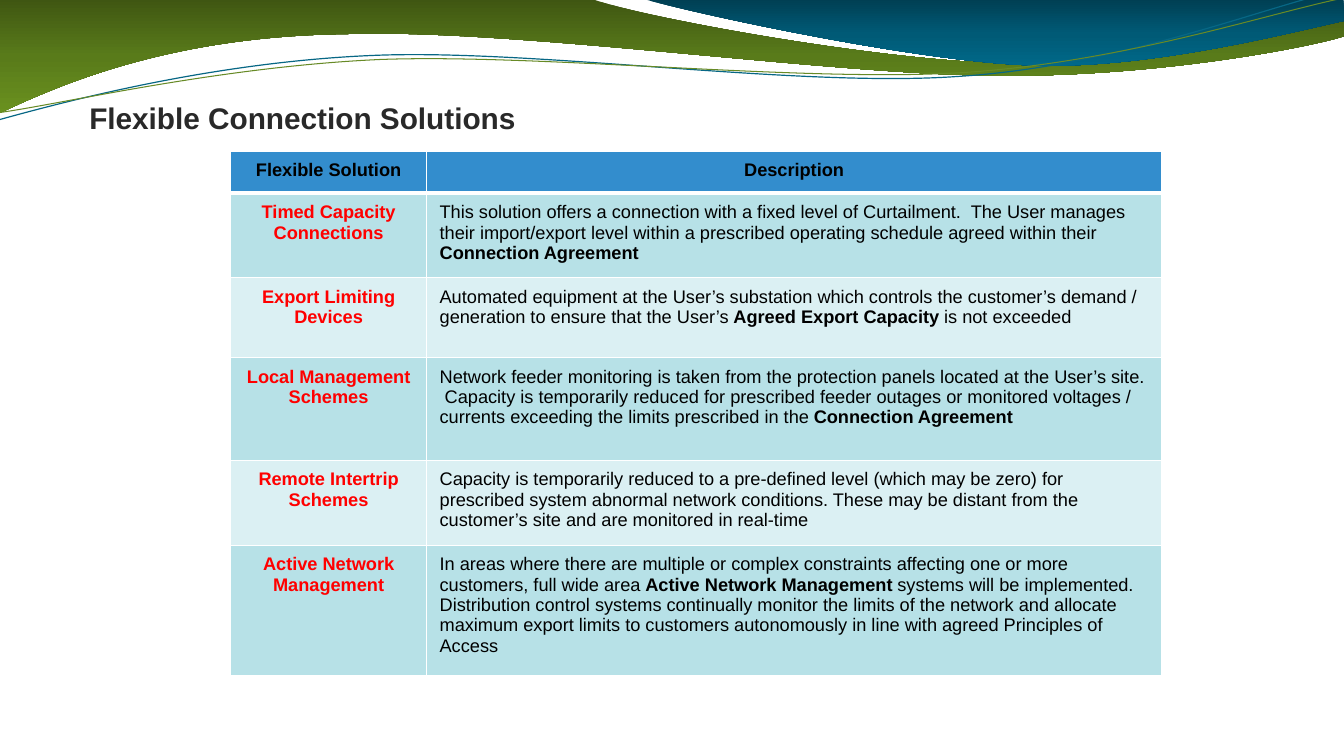
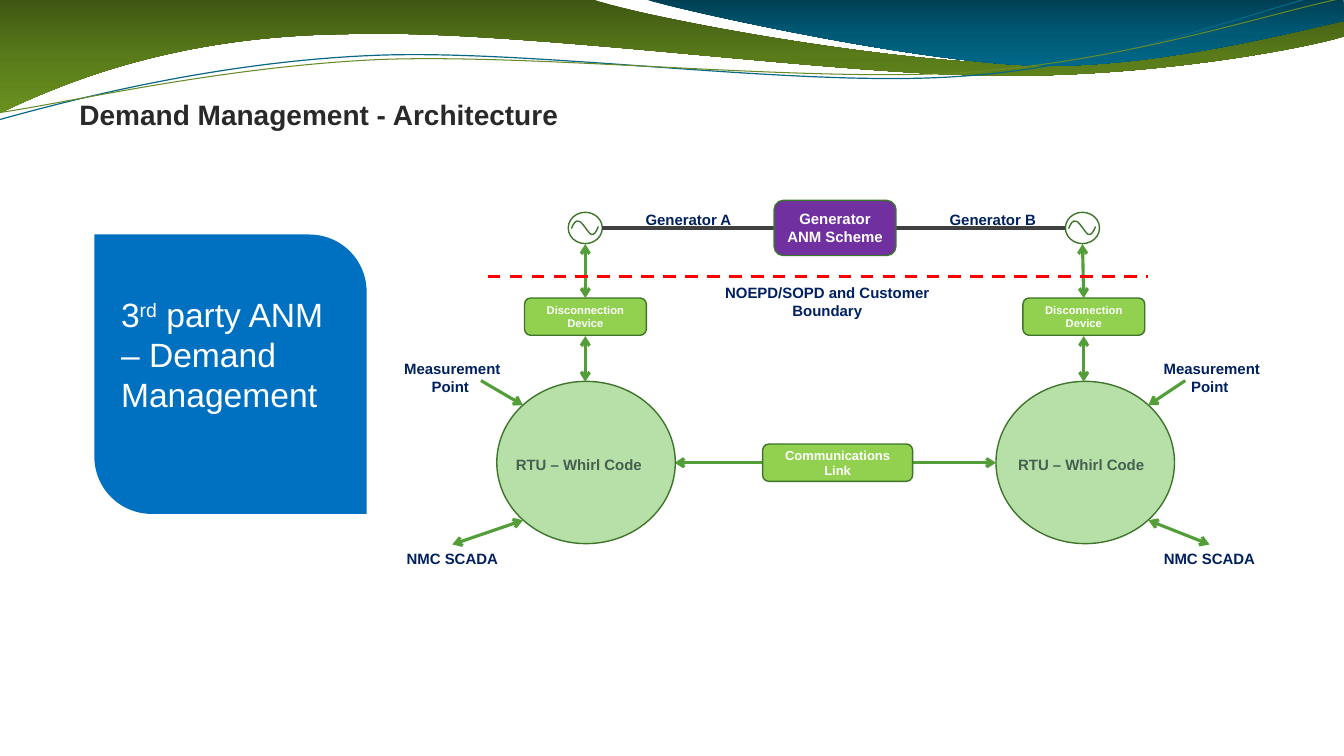
from copy import deepcopy

from lxml.etree import SubElement
from pptx import Presentation
from pptx.dml.color import RGBColor
from pptx.enum.dml import MSO_LINE
from pptx.enum.shapes import MSO_CONNECTOR, MSO_SHAPE
from pptx.enum.text import MSO_ANCHOR, MSO_AUTO_SIZE, PP_ALIGN
from pptx.oxml.ns import qn
from pptx.util import Cm, Pt

FONT = "Arial"
WHITE = RGBColor(0xFF, 0xFF, 0xFF)
BLACK = RGBColor(0, 0, 0)
RED = RGBColor(0xFF, 0, 0)
TITLE_GREY = RGBColor(0x29, 0x29, 0x29)
BUS_GREY = RGBColor(0x40, 0x40, 0x40)
SLATE = RGBColor(0x45, 0x5F, 0x51)
NAVY = RGBColor(0, 0x20, 0x60)
BLUE = RGBColor(0, 0x70, 0xC0)
PURPLE = RGBColor(0x70, 0x30, 0xA0)
HEADER_BLUE = RGBColor(0x33, 0x8D, 0xCD)
ROW_FILLS = (RGBColor(0xB7, 0xE1, 0xE7), RGBColor(0xDB, 0xF0, 0xF3))
LIME = RGBColor(0x92, 0xD0, 0x50)
PALE_GREEN = RGBColor(0xB7, 0xE0, 0xA8)
OUTLINE_GREEN = RGBColor(0x3E, 0x75, 0x2A)
ARROW_GREEN = RGBColor(0x54, 0x9E, 0x39)
TEAL_LINE = RGBColor(0x07, 0x67, 0x85)
OLIVE_LINE = RGBColor(0x67, 0x8A, 0x26)
GREEN_BAND = (RGBColor(0x3F, 0x56, 0x12), RGBColor(0x59, 0x7B, 0x1A), RGBColor(0x6A, 0x91, 0x1F))
TEAL_BAND = (RGBColor(0, 0x3F, 0x53), RGBColor(0, 0x5A, 0x76), RGBColor(0, 0x6A, 0x8B))

BANDS = [
    (GREEN_BAND, (0, 0), [
        (14.91, -0.03),
        (16.1, 0.43, 22.45, 1.6, 25.68, 1.6),
        (28.88, 1.6, 32.44, 0.66, 33.86, 0.23),
        (33.88, 0.91),
        (33.3, 1.12, 29.44, 1.93, 25.25, 1.91),
        (21.06, 1.91, 12.93, 0.71, 8.71, 0.86),
        (4.34, 0.91, 1.55, 2.11, -0.05, 2.87),
    ]),
    (TEAL_BAND, (16.21, -0.03), [
        (17.25, 0.28, 23.09, 1.57, 26.04, 1.65),
        (28.96, 1.75, 32.56, 0.81, 33.86, 0.53),
        (33.86, 0),
    ]),
]
SWOOSHES = [
    (TEAL_LINE, 0.85, (-0.03, 3.02), [
        (1.6, 2.57, 5.33, 1.57, 9.37, 1.4),
        (13.39, 1.22, 20.04, 2.21, 24.1, 1.93),
        (28.19, 1.68, 31.78, 0.2, 33.78, -0.25),
    ]),
    (OLIVE_LINE, 0.75, (-0.03, 2.84), [
        (1.57, 2.62, 5.54, 1.68, 9.58, 1.5),
        (13.64, 1.35, 20.22, 2.08, 24.26, 1.83),
        (28.3, 1.57, 31.88, 0.36, 33.86, -0.05),
    ]),
]
SINE_START = (0.08, 0.41)
SINE = [
    (0.13, 0.3, 0.18, 0.18, 0.28, 0.23),
    (0.36, 0.25, 0.51, 0.53, 0.58, 0.56),
    (0.66, 0.58, 0.71, 0.48, 0.76, 0.36),
]

HEADINGS = ("Flexible Solution", "Description")
COLUMNS = (4.94, 18.52)
ROW_HEIGHTS = (1.06, 2.13, 2.01, 2.59, 2.14, 3.28)
SOLUTIONS = [
    ("Timed Capacity Connections", [
        ("This solution offers a connection with a fixed level of Curtailment.  The User manages "
         "their import/export level within a prescribed operating schedule agreed within their ", False),
        ("Connection Agreement", True)]),
    ("Export Limiting Devices", [
        ("Automated equipment at the User’s substation which controls the customer’s demand / "
         "generation to ensure that the User’s ", False),
        ("Agreed Export Capacity ", True),
        ("is not exceeded", False)]),
    ("Local Management Schemes", [
        ("Network feeder monitoring is taken from the protection panels located at the User’s site. "
         " Capacity is temporarily reduced for prescribed feeder outages or monitored voltages / "
         "currents exceeding the limits prescribed in the ", False),
        ("Connection Agreement", True)]),
    ("Remote Intertrip Schemes", [
        ("Capacity is temporarily reduced to a pre-defined level (which may be zero) for prescribed "
         "system abnormal network conditions. These may be distant from the customer’s site and are "
         "monitored in real-time", False)]),
    ("Active Network Management", [
        ("In areas where there are multiple or complex constraints affecting one or more customers, "
         "full wide area ", False),
        ("Active Network Management", True),
        (" systems will be implemented.  Distribution control systems continually monitor the limits "
         "of the network and allocate maximum export limits to customers autonomously in line with "
         "agreed Principles of Access", False)]),
]

CALLOUT = ("3", "rd", " party ANM – Demand Management")
SIDES = [
    {"rtu": 14.77, "device": 14.75, "source": 14.75, "code": 14.59, "measure": 11.4, "probe": 12.12,
     "scada": 11.4, "outward": -1, "generator": "Generator A", "generator_x": 17.35},
    {"rtu": 27.35, "device": 27.31, "source": 27.28, "code": 27.25, "measure": 30.54, "probe": 29.87,
     "scada": 30.48, "outward": 1, "generator": "Generator B", "generator_x": 25.02},
]
BUS_Y = 5.75
LINK_Y = 11.66


def style(font, size, colour, bold=True):
    font.name, font.size, font.bold = FONT, Pt(size), bold
    font.color.rgb = colour


def trace(page, start, segments, closed, origin=(0, 0)):
    flat = [value for segment in segments for value in segment]
    points = [start, *zip(flat[::2], flat[1::2])]
    first, *rest = [(Cm(origin[0] + x), Cm(origin[1] + y)) for x, y in points]
    builder = page.shapes.build_freeform(*first)
    builder.add_line_segments(rest, close=closed)
    outline = builder.convert_to_shape()
    outline.shadow.inherit = False
    steps = iter(outline.element.findall(".//" + qn("a:lnTo")))
    for segment in segments:
        corner = next(steps)
        if len(segment) == 6:
            corner.tag = qn("a:cubicBezTo")
            for _ in range(2):
                extra = next(steps)
                corner.append(extra[0])
                extra.getparent().remove(extra)
    return outline


def add_stroke(page, colour, width, start, segments, origin=(0, 0)):
    stroke = trace(page, start, segments, False, origin)
    stroke.fill.background()
    stroke.line.color.rgb = colour
    stroke.line.width = Pt(width)
    return stroke


def add_band(page, colours, start, segments):
    band = trace(page, start, segments, True)
    band.line.fill.background()
    band.fill.gradient()
    band.fill.gradient_angle = 270
    stop_list = band.element.find(".//" + qn("a:gsLst"))
    stop_list.append(deepcopy(stop_list[0]))
    for stop, colour, position in zip(band.fill.gradient_stops, colours, (0, 0.5, 1)):
        stop.color.rgb = colour
        stop.position = position
    return band


def move_waves_to_layout(page):
    waves = [add_band(page, *band) for band in BANDS]
    waves += [add_stroke(page, *swoosh) for swoosh in SWOOSHES]
    for index, wave in enumerate(waves, start=2):
        page.slide_layout.shapes.element.insert(index, wave.element)


def set_title(page, text, size, place, insets, anchor):
    title = page.shapes.title
    title.left, title.top, title.width, title.height = map(Cm, place)
    frame = title.text_frame
    frame.auto_size = MSO_AUTO_SIZE.NONE
    frame.word_wrap = True
    frame.vertical_anchor = anchor
    frame.margin_left, frame.margin_top = map(Cm, insets)
    frame.text = text
    para = frame.paragraphs[0]
    para.alignment = PP_ALIGN.LEFT
    style(para.font, size, TITLE_GREY)
    return para


def fill_cell(cell, runs, colour, fill, align, top=1, bottom=1):
    properties = cell._tc.get_or_add_tcPr()
    for side, width in (("L", 1), ("R", 1), ("T", top), ("B", bottom)):
        edge = SubElement(properties, qn("a:ln" + side), w=str(Pt(width)))
        SubElement(SubElement(edge, qn("a:solidFill")), qn("a:srgbClr"), val=str(WHITE))
    cell.fill.solid()
    cell.fill.fore_color.rgb = fill
    cell.margin_left = cell.margin_right = Cm(0.33)
    cell.margin_top = cell.margin_bottom = Cm(0.23)
    para = cell.text_frame.paragraphs[0]
    para.alignment = align
    for text, bold in runs:
        span = para.add_run()
        span.text = text
        style(span.font, 13, colour, bold)


def add_solutions_table(page):
    table = page.shapes.add_table(len(ROW_HEIGHTS), len(COLUMNS), Cm(5.81), Cm(3.81),
                                  Cm(sum(COLUMNS)), Cm(sum(ROW_HEIGHTS))).table
    for column, width in zip(table.columns, COLUMNS):
        column.width = Cm(width)
    for row, height in zip(table.rows, ROW_HEIGHTS):
        row.height = Cm(height)
    for index, heading in enumerate(HEADINGS):
        fill_cell(table.cell(0, index), [(heading, True)], BLACK, HEADER_BLUE, PP_ALIGN.CENTER, bottom=3)
    for index, (name, description) in enumerate(SOLUTIONS):
        fill = ROW_FILLS[index % 2]
        top = 1 if index else 3
        fill_cell(table.cell(index + 1, 0), [(name, True)], RED, fill, PP_ALIGN.CENTER, top)
        fill_cell(table.cell(index + 1, 1), description, BLACK, fill, PP_ALIGN.LEFT, top)


def add_box(page, kind, place, fill, text="", size=10.7):
    box = page.shapes.add_shape(kind, *map(Cm, place))
    box.shadow.inherit = False
    box.fill.solid()
    box.fill.fore_color.rgb = fill
    box.line.color.rgb = OUTLINE_GREEN
    box.line.width = Pt(1)
    if text:
        box.text_frame.text = text
        para = box.text_frame.paragraphs[0]
        para.alignment = PP_ALIGN.CENTER
        style(para.font, size, WHITE)
    return box


def add_label(page, text, centre, top, width=3.4, height=0.71, colour=NAVY, wrap=True):
    label = page.shapes.add_textbox(Cm(centre - width / 2), Cm(top), Cm(width), Cm(height))
    label.text_frame.word_wrap = wrap
    label.text_frame.text = text
    para = label.text_frame.paragraphs[0]
    para.alignment = PP_ALIGN.CENTER
    style(para.font, 10.7, colour)


def add_line(page, start, end, colour=ARROW_GREEN, width=2.25, arrows=("head", "tail"), dash=None):
    line = page.shapes.add_connector(MSO_CONNECTOR.STRAIGHT, *map(Cm, start + end))
    line.line.color.rgb = colour
    line.line.width = Pt(width)
    if dash:
        line.line.dash_style = dash
    for name in arrows:
        SubElement(line.element.find(".//" + qn("a:ln")), qn(f"a:{name}End"), type="arrow")
    SubElement(line.element.spPr, qn("a:effectLst"))


def add_callout(page):
    box = add_box(page, MSO_SHAPE.ROUND_2_DIAG_RECTANGLE, (2.38, 5.91, 6.86, 7.04), BLUE)
    box.line.fill.background()
    box.adjustments[0], box.adjustments[1] = 0, 0.21
    box.text_frame.margin_bottom = Cm(1.14)
    para = box.text_frame.paragraphs[0]
    para.alignment = PP_ALIGN.LEFT
    for text in CALLOUT:
        span = para.add_run()
        span.text = text
        style(span.font, 24, WHITE, False)
    box.element.findall(".//" + qn("a:rPr"))[1].set("baseline", "30000")


def add_side(page, rtu, device, source, code, measure, probe, scada, outward, generator, generator_x):
    rim = rtu + outward * 1.59
    add_box(page, MSO_SHAPE.OVAL, (rtu - 2.25, 9.61, 4.5, 4.09), PALE_GREEN)
    add_label(page, "RTU – Whirl Code", code, 11.35, 3.73, colour=SLATE, wrap=False)
    add_label(page, "Measurement Point ", measure, 8.93, height=1.17)
    add_line(page, (probe, 9.59), (rim, 10.21), arrows=("tail",))
    add_box(page, MSO_SHAPE.ROUNDED_RECTANGLE, (device - 1.53, 7.51, 3.07, 0.94), LIME,
            "Disconnection Device", 8)
    add_line(page, (device, 7.51), (source, 6.15))
    add_line(page, (device, 9.62), (device, 8.47))
    add_box(page, MSO_SHAPE.OVAL, (source - 0.43, 5.35, 0.86, 0.79), WHITE)
    add_stroke(page, OUTLINE_GREEN, 1, SINE_START, SINE, (source - 0.43, 5.35))
    add_label(page, "NMC SCADA", scada, 13.72)
    add_line(page, (rim, 13.11), (scada, 13.72))
    add_label(page, generator, generator_x, 5.18)
    add_line(page, (source - outward * 0.43, BUS_Y), (21.05 + outward * 1.53, BUS_Y), BUS_GREY, 3, ())


def add_architecture(page):
    add_callout(page)
    add_line(page, (17.0, LINK_Y), (25.1, LINK_Y))
    add_box(page, MSO_SHAPE.ROUNDED_RECTANGLE, (19.22, 11.19, 3.78, 0.94), LIME, "Communications Link", 9.3)
    for side in SIDES:
        add_side(page, **side)
    add_line(page, (12.29, 6.96), (28.93, 6.96), RED, 2.25, (), MSO_LINE.DASH)
    add_label(page, "NOEPD/SOPD and Customer Boundary", 20.85, 7.01, 6.15, 1.17)
    add_box(page, MSO_SHAPE.ROUNDED_RECTANGLE, (19.51, 5.05, 3.07, 1.39), PURPLE, "Generator ANM Scheme")


def main():
    deck = Presentation()
    deck.slide_width, deck.slide_height = Cm(33.87), Cm(19.05)
    solutions, architecture = [deck.slides.add_slide(deck.slide_layouts[5]) for _ in range(2)]
    move_waves_to_layout(solutions)
    set_title(solutions, "Flexible Connection Solutions", 21.3,
              (2, 2.39, 31.09, 1.42), (0.25, 0.13), MSO_ANCHOR.TOP)
    add_solutions_table(solutions)
    heading = set_title(architecture, "Demand Management - Architecture", 20,
                        (2, 2.18, 24.94, 1.63), (0, 0.15), MSO_ANCHOR.MIDDLE)
    heading.line_spacing = Pt(17)
    add_architecture(architecture)
    deck.save("out.pptx")


if __name__ == "__main__":
    main()
